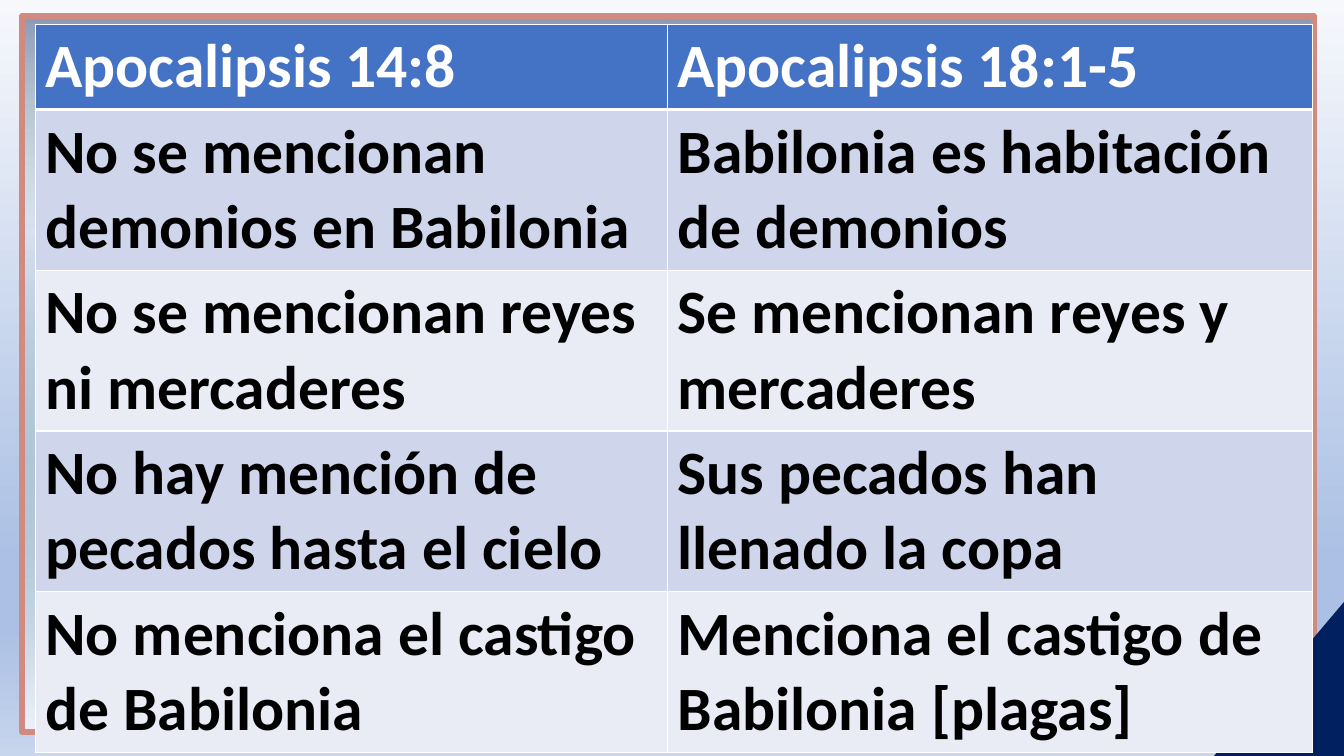
from lxml import etree
from pptx import Presentation
from pptx.dml.color import RGBColor
from pptx.enum.shapes import MSO_SHAPE
from pptx.oxml.ns import qn
from pptx.util import Inches, Pt

RECTANGLE = MSO_SHAPE.RECTANGLE
RIGHT_TRIANGLE = MSO_SHAPE.RIGHT_TRIANGLE

# Content
COMPARISON = [
    ("Apocalipsis 14:8", "Apocalipsis 18:1-5"),
    ("No se mencionan demonios en Babilonia", "Babilonia es habitación de demonios"),
    ("No se mencionan reyes ni mercaderes", "Se mencionan reyes y mercaderes"),
    ("No hay mención de pecados hasta el cielo", "Sus pecados han llenado la copa"),
    ("No menciona el castigo de Babilonia", "Menciona el castigo de Babilonia [plagas]"),
]

# Style: gradient stops are (position %, colour, opacity %)
BACKGROUND_STOPS = [(0, "F6F8FC", 100), (74, "ABC0E4", 100),
                    (83, "ABC0E4", 100), (100, "C7D5ED", 100)]
FRAME_STOPS = [(2, "FFFFFF", 66), (70, "558868", 0), (100, "002060", 43)]
NAVY, SALMON, WHITE, BLACK = "002060", "D18A7F", "FFFFFF", "000000"
HEADER_FILL = "4472C4"
BAND_FILLS = ("CFD5EA", "E9EBF5")
COLUMN_WIDTHS = (6.27, 6.4)
HEADER_HEIGHT, ROW_HEIGHT = 0.84, 1.59


def rgb(value):
    return RGBColor.from_string(value)


def set_gradient(fill, element, stops, angle):
    fill.gradient()
    fill.gradient_angle = angle
    stop_list = next(element.iter(qn("a:gsLst")))
    for old_stop in list(stop_list):
        stop_list.remove(old_stop)
    for position, color, opacity in stops:
        stop = etree.SubElement(stop_list, qn("a:gs"), pos=str(position * 1000))
        stop_color = etree.SubElement(stop, qn("a:srgbClr"), val=color)
        if opacity < 100:
            etree.SubElement(stop_color, qn("a:alpha"), val=str(opacity * 1000))


def set_borders(cell, widths):
    properties = cell._tc.get_or_add_tcPr()
    for index, (side, width) in enumerate(widths.items()):
        line = etree.Element(qn("a:ln" + side), w=str(Pt(width)))
        line_fill = etree.SubElement(line, qn("a:solidFill"))
        etree.SubElement(line_fill, qn("a:srgbClr"), val=WHITE)
        properties.insert(index, line)


def add_shape(slide, kind, left, top, width, height):
    shape = slide.shapes.add_shape(kind, Inches(left), Inches(top),
                                   Inches(width), Inches(height))
    shape.shadow.inherit = False
    return shape


def add_comparison(slide):
    height = HEADER_HEIGHT + ROW_HEIGHT * (len(COMPARISON) - 1)
    table = slide.shapes.add_table(
        len(COMPARISON), len(COLUMN_WIDTHS), Inches(0.35), Inches(0.24),
        Inches(sum(COLUMN_WIDTHS)), Inches(height)).table
    for column, width in zip(table.columns, COLUMN_WIDTHS):
        column.width = Inches(width)
    for r, texts in enumerate(COMPARISON):
        is_header = r == 0
        table.rows[r].height = Inches(HEADER_HEIGHT if is_header else ROW_HEIGHT)
        for c, text in enumerate(texts):
            cell = table.cell(r, c)
            cell.fill.solid()
            cell.fill.fore_color.rgb = rgb(
                HEADER_FILL if is_header else BAND_FILLS[(r - 1) % 2])
            set_borders(cell, {"L": 1, "R": 1, "T": 3 if r == 1 else 1,
                               "B": 3 if is_header else 1})
            run = cell.text_frame.paragraphs[0].add_run()
            run.text = text
            run.font.name = "Calibri"
            run.font.size = Pt(44)
            run.font.bold = True
            run.font.color.rgb = rgb(WHITE if is_header else BLACK)


def main():
    deck = Presentation()
    deck.slide_width, deck.slide_height = Inches(13.33), Inches(7.5)
    slide = deck.slides.add_slide(deck.slide_layouts[6])

    # Background, top to bottom
    set_gradient(slide.background.fill, slide.element, BACKGROUND_STOPS, 270)

    # Framed panel, bottom to top
    frame = add_shape(slide, RECTANGLE, 0.22, 0.16, 12.81, 7.1)
    set_gradient(frame.fill, frame.element, FRAME_STOPS, 90)
    frame.line.color.rgb = rgb(SALMON)
    frame.line.width = Pt(4.5)

    # Corner triangle
    corner = add_shape(slide, RIGHT_TRIANGLE, 11.92, 6.08, 1.54, 1.3)
    corner.rotation = 270
    corner.fill.solid()
    corner.fill.fore_color.rgb = rgb(NAVY)
    corner.line.fill.background()

    add_comparison(slide)
    deck.save("out.pptx")


if __name__ == "__main__":
    main()
